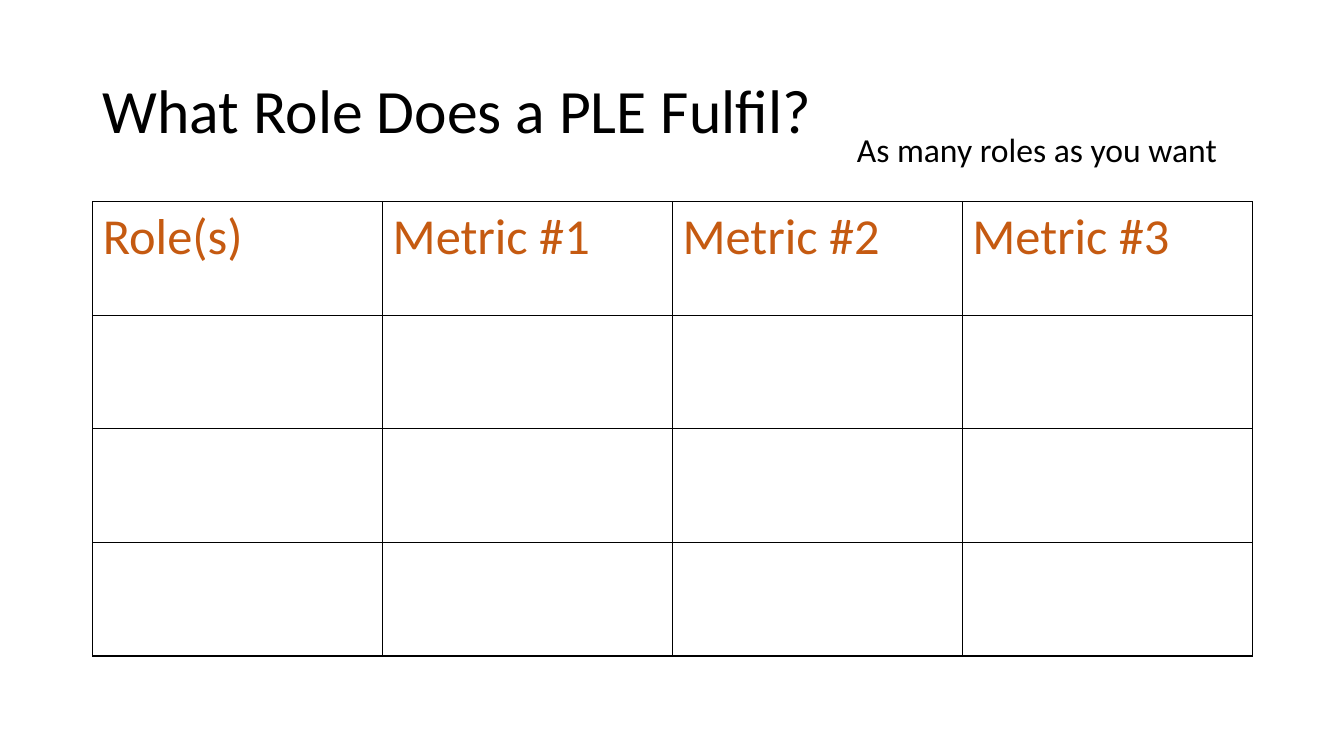
from lxml import etree
from pptx import Presentation
from pptx.dml.color import RGBColor
from pptx.enum.text import MSO_ANCHOR, MSO_AUTO_SIZE, PP_ALIGN
from pptx.oxml import parse_xml
from pptx.oxml.ns import nsdecls
from pptx.util import Pt

PX = 9144  # EMU per px, 100 px to the inch
FONT = "Calibri"
BLACK = RGBColor(0x00, 0x00, 0x00)
WHITE = RGBColor(0xFF, 0xFF, 0xFF)
ORANGE = RGBColor(0xC5, 0x5A, 0x11)

TITLE_BOX = (92, 40, 1150, 145)
HINT_BOX = (840, 123, 435, 50)
ROLES_BOX = (92, 200, 1150, 451)
HEADINGS = ["Role(s)", "Metric #1", "Metric #2", "Metric #3"]
ROW_COUNT = 4


def emu(box):
    return [length * PX for length in box]


def write(frame, text, size, color=BLACK, spacing=1.0, anchor=MSO_ANCHOR.TOP):
    frame.word_wrap = True
    frame.vertical_anchor = anchor
    paragraph = frame.paragraphs[0]
    paragraph.alignment = PP_ALIGN.LEFT
    paragraph.line_spacing = spacing
    run = paragraph.add_run()
    run.text = text
    run.font.name = FONT
    run.font.size = Pt(size)
    run.font.bold = False
    run.font.color.rgb = color


def add_title(slide, box):
    title = slide.shapes.title
    title.left, title.top, title.width, title.height = emu(box)
    write(title.text_frame, "What Role Does a PLE Fulfil?", 44,
          spacing=0.9, anchor=MSO_ANCHOR.MIDDLE)
    title.text_frame.auto_size = MSO_AUTO_SIZE.NONE


def add_hint(slide, box):
    hint = slide.shapes.add_textbox(*emu(box)).text_frame
    write(hint, "As many roles as you want", 24)
    hint.auto_size = MSO_AUTO_SIZE.SHAPE_TO_FIT_TEXT


def outline_cell(cell):
    properties = cell._tc.get_or_add_tcPr()
    for index, side in enumerate(("lnL", "lnR", "lnT", "lnB")):
        border = parse_xml(
            f'<a:{side} {nsdecls("a")} w="{Pt(1)}"><a:solidFill>'
            f'<a:srgbClr val="{BLACK}"/></a:solidFill></a:{side}>')
        properties.insert(index, border)


def add_roles_table(slide, box):
    table = slide.shapes.add_table(ROW_COUNT, len(HEADINGS), *emu(box)).table
    table.first_row = False
    table.horz_banding = False
    for cell in table.iter_cells():
        cell.fill.background()
        outline_cell(cell)
    for column, heading in enumerate(HEADINGS):
        write(table.cell(0, column).text_frame, heading, 36, ORANGE)


def main():
    deck = Presentation()
    deck.slide_width, deck.slide_height = emu((1333, 750))
    slide = deck.slides.add_slide(deck.slide_layouts[5])
    slide.background.fill.solid()
    slide.background.fill.fore_color.rgb = WHITE

    # Heading, roles grid and the hint beside the heading
    add_title(slide, TITLE_BOX)
    add_roles_table(slide, ROLES_BOX)
    add_hint(slide, HINT_BOX)
    deck.save("out.pptx")


if __name__ == "__main__":
    main()
